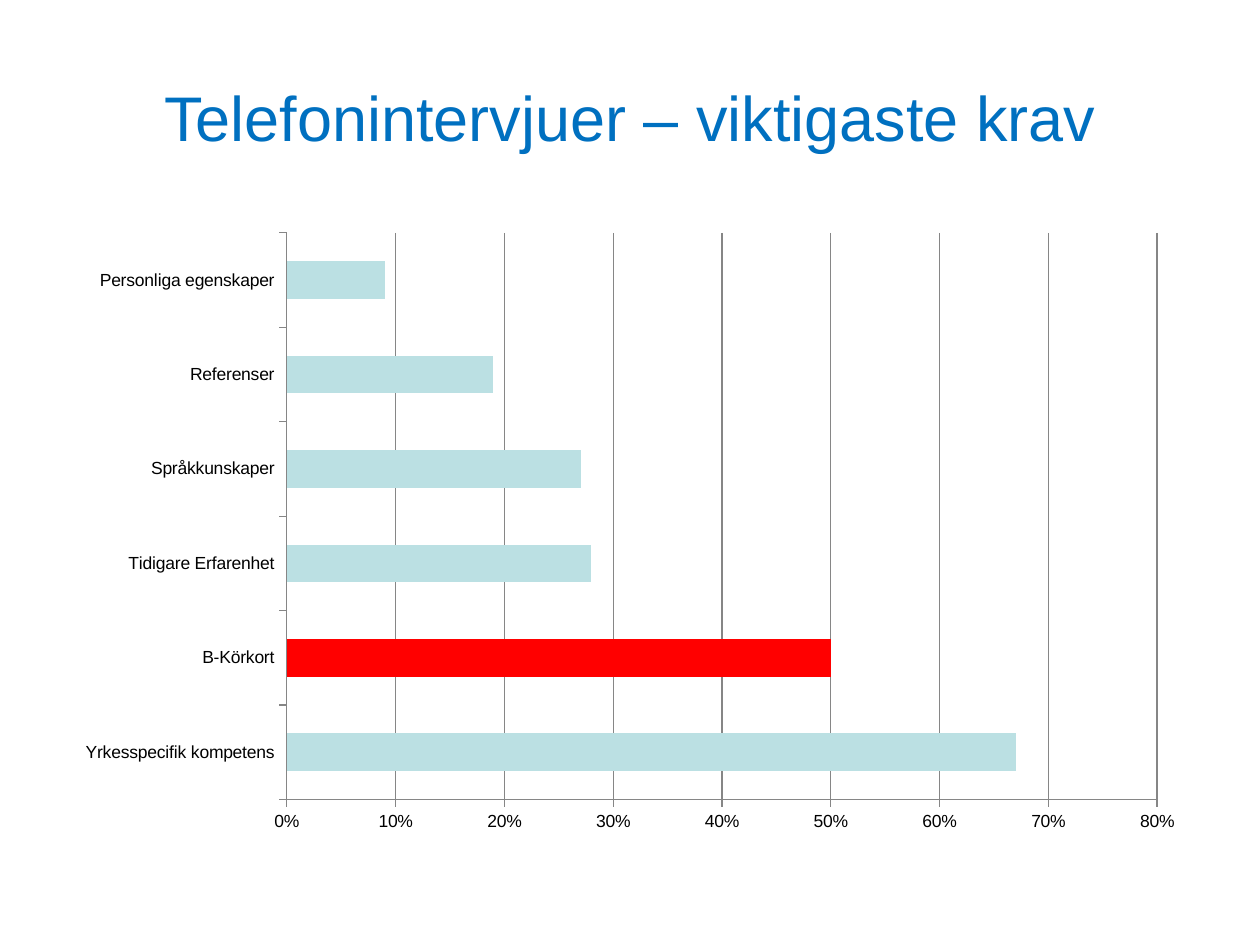
from dataclasses import dataclass

from pptx import Presentation
from pptx.chart.data import CategoryChartData
from pptx.dml.color import RGBColor
from pptx.enum.chart import XL_CHART_TYPE, XL_TICK_MARK
from pptx.enum.text import MSO_ANCHOR, PP_ALIGN
from pptx.util import Pt

BAR = XL_CHART_TYPE.BAR_CLUSTERED
TICK_OUT = XL_TICK_MARK.OUTSIDE
TICK_NONE = XL_TICK_MARK.NONE
MIDDLE = MSO_ANCHOR.MIDDLE
CENTER = PP_ALIGN.CENTER


@dataclass(frozen=True)
class Theme:
    font: str = "Arial"
    title_size: int = 36
    chart_size: int = 10
    title: RGBColor = RGBColor(0x00, 0x70, 0xC0)
    text: RGBColor = RGBColor(0x00, 0x00, 0x00)
    line: RGBColor = RGBColor(0x86, 0x86, 0x86)
    bar: RGBColor = RGBColor(0xBB, 0xE0, 0xE3)
    highlight: RGBColor = RGBColor(0xFF, 0x00, 0x00)


THEME = Theme()
LEFT, WIDTH = 36, 648
HIGHLIGHTED = "B-Körkort"
REQUIREMENTS = {
    "Yrkesspecifik kompetens": 0.67,
    HIGHLIGHTED: 0.5,
    "Tidigare Erfarenhet": 0.28,
    "Språkkunskaper": 0.27,
    "Referenser": 0.19,
    "Personliga egenskaper": 0.09,
}


def style_font(font, size, color):
    font.name = THEME.font
    font.size = Pt(size)
    font.color.rgb = color


def paint(target, color):
    target.format.fill.solid()
    target.format.fill.fore_color.rgb = color


def style_axis(axis):
    axis.major_tick_mark = TICK_OUT
    axis.minor_tick_mark = TICK_NONE
    axis.format.line.color.rgb = THEME.line
    axis.format.line.width = Pt(0.75)


def add_title(page, text):
    box = page.shapes.add_textbox(Pt(LEFT), Pt(21.6), Pt(WIDTH), Pt(90))
    frame = box.text_frame
    frame.word_wrap = True
    frame.vertical_anchor = MIDDLE
    para = frame.paragraphs[0]
    para.text = text
    para.alignment = CENTER
    style_font(para.font, THEME.title_size, THEME.title)


def add_requirements_chart(page):
    data = CategoryChartData(number_format="0%")
    data.categories = list(REQUIREMENTS)
    data.add_series("Series 1", REQUIREMENTS.values())
    chart = page.shapes.add_chart(
        BAR, Pt(LEFT), Pt(126), Pt(WIDTH), Pt(356.4), data
    ).chart
    chart.has_legend = False
    chart.has_title = False
    style_font(chart.font, THEME.chart_size, THEME.text)

    plot = chart.plots[0]
    plot.gap_width = 150
    plot.vary_by_categories = False
    series = plot.series[0]
    paint(series, THEME.bar)
    paint(series.points[list(REQUIREMENTS).index(HIGHLIGHTED)], THEME.highlight)

    style_axis(chart.category_axis)
    values = chart.value_axis
    style_axis(values)
    values.minimum_scale = 0
    values.maximum_scale = 0.8
    values.major_unit = 0.1
    values.tick_labels.number_format = "0%"
    values.tick_labels.number_format_is_linked = False
    values.has_major_gridlines = True
    values.major_gridlines.format.line.color.rgb = THEME.line
    values.major_gridlines.format.line.width = Pt(0.75)


def main():
    deck = Presentation()
    deck.slide_width = Pt(720)
    deck.slide_height = Pt(540)
    page = deck.slides.add_slide(deck.slide_layouts[6])
    add_title(page, "Telefonintervjuer – viktigaste krav")
    add_requirements_chart(page)
    deck.save("out.pptx")


if __name__ == "__main__":
    main()
